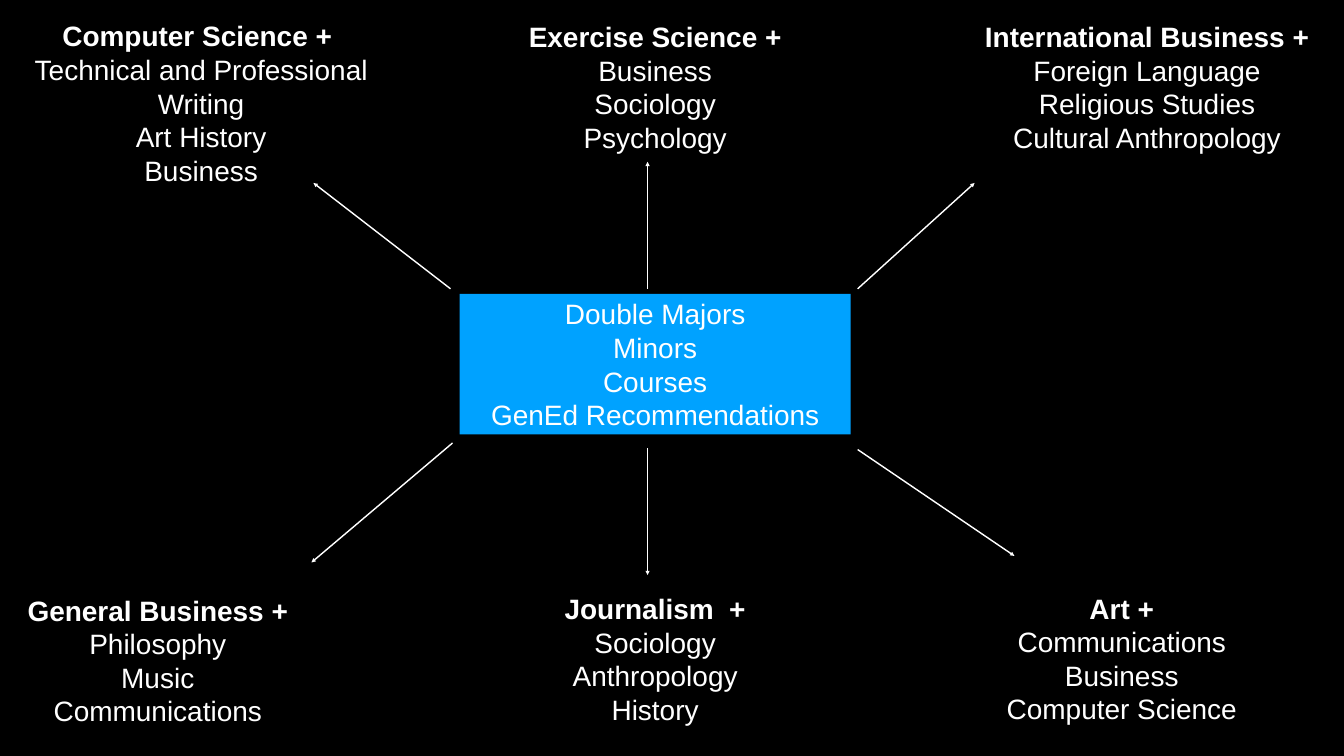
import pptx
import pptx.util
import pptx.dml.color
import pptx.enum.shapes
import pptx.enum.text
import pptx.oxml.ns
from lxml import etree

Inches, Pt = pptx.util.Inches, pptx.util.Pt
RGBColor = pptx.dml.color.RGBColor
MSO_ANCHOR = pptx.enum.text.MSO_ANCHOR
MSO_AUTO_SIZE = pptx.enum.text.MSO_AUTO_SIZE
qn = pptx.oxml.ns.qn

BLACK = RGBColor(0x00, 0x00, 0x00)
WHITE = RGBColor(0xFF, 0xFF, 0xFF)
BLUE = RGBColor(0x00, 0xA2, 0xFF)
FONT, SIZE, INSET = "Arial", 40, 0.06

# (left, top, width, height), wraps, heading, subjects
MAJORS = [
    ((0.12, 0.32, 7.74, 3.44), True, "Computer Science + ",
     ["Technical and Professional Writing", "Art History", "Business"]),
    ((10.43, 0.33, 5.14, 2.78), False, "Exercise Science +",
     ["Business", "Sociology", "Psychology"]),
    ((19.42, 0.33, 6.68, 2.78), False, "International Business + ",
     ["Foreign Language", "Religious Studies", "Cultural Anthropology"]),
    ((0.43, 11.38, 5.4, 3.44), False, "General Business + ",
     ["Philosophy", "Music", "Communications"]),
    ((11.07, 11.68, 3.86, 2.78), False, "Journalism  + ",
     ["Sociology", "Anthropology", "History"]),
    ((19.88, 11.34, 4.76, 3.44), False, "Art +",
     ["Communications", "Business", "Computer Science"]),
]

HUB_BOX = (9.12, 5.83, 7.76, 2.79)
HUB_LINES = ["Double Majors", "Minors", "Courses", "GenEd Recommendations"]

# (start, end), each arrow pointing away from the hub
ARROWS = [
    ((8.94, 5.73), (6.22, 3.63)),
    ((12.85, 5.73), (12.85, 3.21)),
    ((17.02, 5.73), (19.34, 3.63)),
    ((8.98, 8.79), (6.18, 11.16)),
    ((12.85, 8.89), (12.85, 11.41)),
    ((17.02, 8.92), (20.13, 11.03)),
]


def write_lines(tf, lines, bold_first=False):
    """Fill a text frame with centred white lines, one paragraph each."""
    tf.vertical_anchor = MSO_ANCHOR.MIDDLE
    tf.margin_left = tf.margin_right = Inches(INSET)
    tf.margin_top = tf.margin_bottom = Inches(INSET)
    for i, line in enumerate(lines):
        p = tf.add_paragraph() if i else tf.paragraphs[0]
        p.text = line
        p.alignment = pptx.enum.text.PP_ALIGN.CENTER
        font = p.runs[0].font
        font.name, font.size = FONT, Pt(SIZE)
        font.bold = bold_first and i == 0
        font.color.rgb = WHITE


def add_major(slide, box, wraps, heading, subjects):
    tf = slide.shapes.add_textbox(*map(Inches, box)).text_frame
    write_lines(tf, [heading, *subjects], bold_first=True)
    tf.word_wrap = wraps
    tf.auto_size = MSO_AUTO_SIZE.SHAPE_TO_FIT_TEXT


def add_hub(slide):
    sp = slide.shapes.add_shape(
        pptx.enum.shapes.MSO_SHAPE.RECTANGLE, *map(Inches, HUB_BOX))
    sp.shadow.inherit = False
    sp.fill.solid()
    sp.fill.fore_color.rgb = BLUE
    sp.line.fill.background()
    write_lines(sp.text_frame, HUB_LINES)
    sp.text_frame.word_wrap = True


def add_arrow(slide, start, end):
    line = slide.shapes.add_connector(
        pptx.enum.shapes.MSO_CONNECTOR.STRAIGHT, *map(Inches, start + end))
    line.line.color.rgb = WHITE
    line.line.width = Pt(2)
    ln = line.line._get_or_add_ln()
    etree.SubElement(ln, qn("a:tailEnd"), type="triangle")
    etree.SubElement(line._element.spPr, qn("a:effectLst"))


def main():
    prs = pptx.Presentation()
    prs.slide_width, prs.slide_height = Inches(26.67), Inches(15)
    slide = prs.slides.add_slide(prs.slide_layouts[6])
    slide.background.fill.solid()
    slide.background.fill.fore_color.rgb = BLACK
    for major in MAJORS:
        add_major(slide, *major)
    add_hub(slide)
    for start, end in ARROWS:
        add_arrow(slide, start, end)
    prs.save("out.pptx")


if __name__ == "__main__":
    main()
